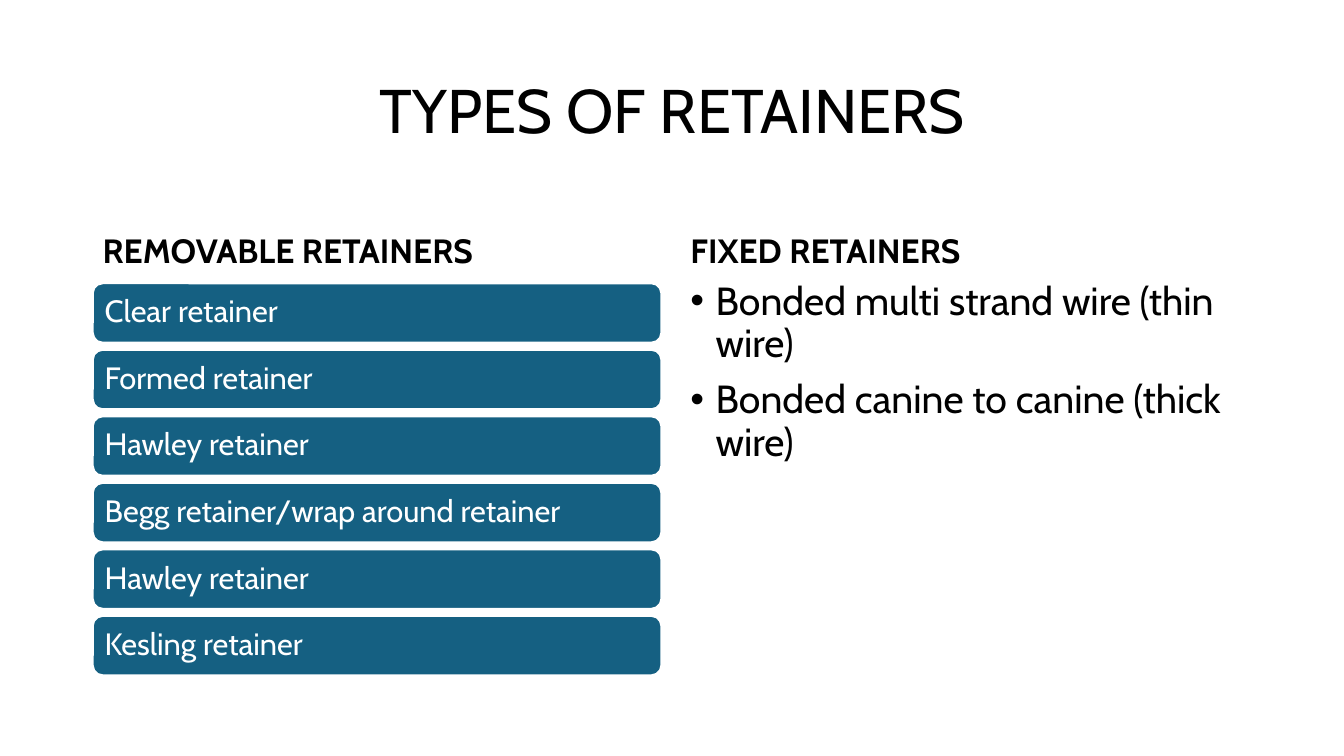
from pptx import Presentation
from pptx.dml.color import RGBColor
from pptx.enum.shapes import MSO_SHAPE
from pptx.enum.text import MSO_ANCHOR, MSO_AUTO_SIZE, PP_ALIGN
from pptx.util import Pt
from lxml import etree

PX = 9144
NS = "{http://schemas.openxmlformats.org/drawingml/2006/main}"


def paint(color, code):
    color.rgb = RGBColor.from_string(code)


def write(shape, *lines, size=24, bold=False, color="000000", align=PP_ALIGN.LEFT,
          anchor=MSO_ANCHOR.MIDDLE, side=10, edge=5, before=0, bullet=False):
    frame = shape.text_frame
    frame.word_wrap = True
    frame.auto_size = MSO_AUTO_SIZE.NONE
    frame.vertical_anchor = anchor
    frame.margin_left = frame.margin_right = side * PX
    frame.margin_top = frame.margin_bottom = edge * PX
    for i, line in enumerate(lines):
        para = frame.add_paragraph() if i else frame.paragraphs[0]
        para.alignment = align
        para.line_spacing = 0.9
        para.space_before = Pt(before)
        run = para.add_run()
        run.text = line
        run.font.name = "Cabin"
        run.font.size = Pt(size)
        run.font.bold = bold
        paint(run.font.color, color)
        if bullet:
            props = para._p.get_or_add_pPr()
            props.set("marL", str(25 * PX))
            props.set("indent", str(-25 * PX))
            etree.SubElement(props, NS + "buFont", typeface="Arial")
            etree.SubElement(props, NS + "buChar", char="•")


deck = Presentation()
deck.slide_width = 1333 * PX
deck.slide_height = 750 * PX
slide = deck.slides.add_slide(deck.slide_layouts[5])
shapes = slide.shapes

title = shapes.title
title.left, title.top, title.width, title.height = [n * PX for n in (92, 40, 1150, 145)]
write(title, "TYPES OF RETAINERS", size=44, align=PP_ALIGN.CENTER)

for head, left, width in (("REMOVABLE RETAINERS", 92, 564), ("FIXED RETAINERS", 675, 567)):
    box = shapes.add_textbox(left * PX, 184 * PX, width * PX, 90 * PX)
    write(box, head, bold=True, anchor=MSO_ANCHOR.BOTTOM, before=10)

kinds = ("Clear retainer", "Formed retainer", "Hawley retainer",
         "Begg retainer/wrap around retainer", "Hawley retainer", "Kesling retainer")
for i, kind in enumerate(kinds):
    bar = shapes.add_shape(MSO_SHAPE.ROUNDED_RECTANGLE,
                           92 * PX, (281 + 66 * i) * PX, 564 * PX, 59 * PX)
    bar.shadow.inherit = False
    bar.fill.solid()
    paint(bar.fill.fore_color, "156082")
    paint(bar.line.color, "FFFFFF")
    bar.line.width = Pt(1.5)
    write(bar, kind, size=22, color="FFFFFF", side=9, edge=9)

body = shapes.add_textbox(675 * PX, 274 * PX, 567 * PX, 403 * PX)
write(body, "Bonded multi strand wire (thin wire)", "Bonded canine to canine (thick wire)",
      size=28, anchor=MSO_ANCHOR.TOP, before=10, bullet=True)

deck.save("out.pptx")
